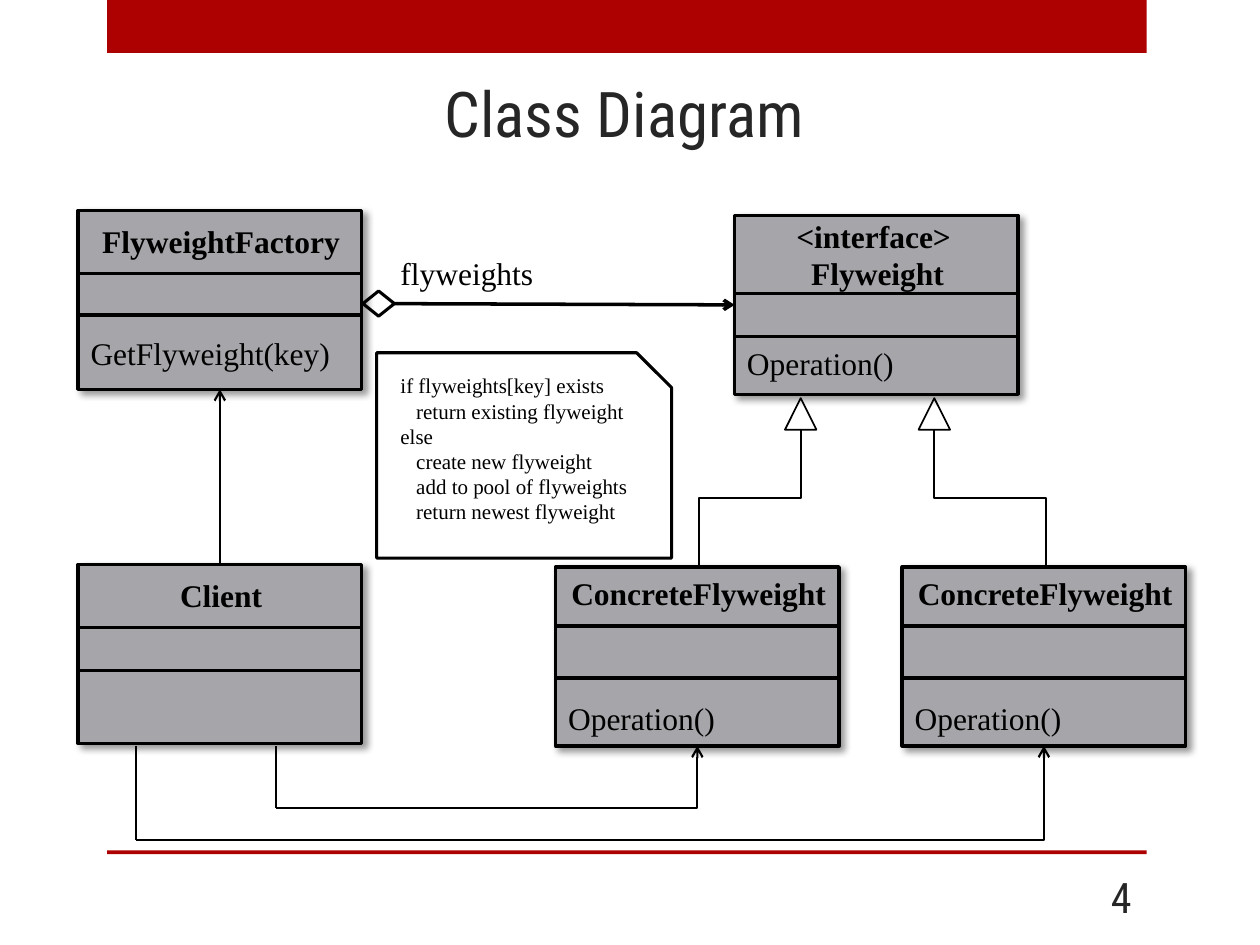
from lxml import etree
from pptx import Presentation
from pptx.dml.color import RGBColor
from pptx.enum.shapes import MSO_CONNECTOR, MSO_SHAPE
from pptx.enum.text import MSO_ANCHOR, MSO_AUTO_SIZE, PP_ALIGN
from pptx.oxml.ns import qn
from pptx.util import Inches, Pt

STRAIGHT, ELBOW = MSO_CONNECTOR.STRAIGHT, MSO_CONNECTOR.ELBOW
RECTANGLE, TRIANGLE = MSO_SHAPE.RECTANGLE, MSO_SHAPE.ISOSCELES_TRIANGLE
DIAMOND, SNIPPED = MSO_SHAPE.DIAMOND, MSO_SHAPE.SNIP_1_RECTANGLE
NOTE_SHAPE = MSO_SHAPE.SNIP_ROUND_RECTANGLE
LEFT, CENTER, RIGHT = PP_ALIGN.LEFT, PP_ALIGN.CENTER, PP_ALIGN.RIGHT
TOP, MIDDLE = MSO_ANCHOR.TOP, MSO_ANCHOR.MIDDLE
TOP_SITE, LEFT_SITE, BOTTOM_SITE, RIGHT_SITE = range(4)

COLUMNS, ROWS = 100, 75
CLASS_WIDTH, CLASS_HEIGHT = 22.5, 14.2
RED, GREY, BLACK, DARK = "AD0101", "A5A5AA", "000000", "262626"
HEADING_FONT, BODY_FONT = "Roboto Condensed", "Times New Roman"


def grid(cells):
    """Length of a number of grid cells, each a tenth of an inch square."""
    return Inches(cells / 10)


def color(hex_string):
    return RGBColor.from_string(hex_string)


def add_shape(slide, kind, box, fill=None, line_width=None):
    shape = slide.shapes.add_shape(kind, *map(grid, box))
    shape.shadow.inherit = False
    if fill:
        shape.fill.solid()
        shape.fill.fore_color.rgb = color(fill)
    else:
        shape.fill.background()
    if line_width:
        shape.line.color.rgb = color(BLACK)
        shape.line.width = Pt(line_width)
    else:
        shape.line.fill.background()
    return shape


def add_drop_shadow(shape):
    effects = shape._element.spPr.find(qn("a:effectLst"))
    shadow = etree.SubElement(effects, qn("a:outerShdw"), blurRad=str(Pt(4)),
                              dist=str(Pt(3)), dir="2700000", algn="tl", rotWithShape="0")
    tint = etree.SubElement(shadow, qn("a:srgbClr"), val=BLACK)
    etree.SubElement(tint, qn("a:alpha"), val="40000")


def add_text(slide, box, lines, size=18, bold=False, align=LEFT, anchor=TOP,
             font=BODY_FONT, ink=BLACK, wrap=True, grow=True):
    """Add a text box; each line is a pair of text and left indent in points."""
    frame = slide.shapes.add_textbox(*map(grid, box)).text_frame
    frame.word_wrap = wrap
    frame.auto_size = MSO_AUTO_SIZE.SHAPE_TO_FIT_TEXT if grow else MSO_AUTO_SIZE.NONE
    frame.vertical_anchor = anchor
    for index, (text, indent) in enumerate(lines):
        paragraph = frame.add_paragraph() if index else frame.paragraphs[0]
        paragraph.alignment = align
        if indent:
            paragraph._p.get_or_add_pPr().set("marL", str(Pt(indent)))
        run = paragraph.add_run()
        run.text = text
        run.font.name = font
        run.font.size = Pt(size)
        run.font.bold = bold
        run.font.color.rgb = color(ink)


def add_line(slide, start, end, width=1.25, arrow=False, kind=STRAIGHT):
    line = slide.shapes.add_connector(kind, *map(grid, start + end))
    line.line.color.rgb = color(BLACK)
    line.line.width = Pt(width)
    if arrow:
        etree.SubElement(line.line._get_or_add_ln(), qn("a:tailEnd"), type="arrow")
    etree.SubElement(line._element.spPr, qn("a:effectLst"))
    return line


def add_class(slide, left, top, names, operation, dividers, name_offset, operation_offset=0):
    """Add a class box with three compartments; offsets run down from its top."""
    box = add_shape(slide, RECTANGLE, (left, top, CLASS_WIDTH, CLASS_HEIGHT), GREY, 2)
    add_drop_shadow(box)
    for offset in dividers:
        add_line(slide, (left, top + offset), (left + CLASS_WIDTH, top + offset), 2)
    add_text(slide, (left + 0.1, top + name_offset, CLASS_WIDTH, 4 if len(names) == 1 else 7.1),
             [(name, 0) for name in names], bold=True, align=CENTER, wrap=False)
    if operation:
        add_text(slide, (left, top + operation_offset, CLASS_WIDTH, 4), [(operation, 0)])
    return box


def add_inheritance(slide, parent_x, child_x, width):
    """Add a hollow triangle and a line that goes down, across and down to a child."""
    add_shape(slide, TRIANGLE, (parent_x - 1.25, 31.6, 2.5, 2.5), line_width=1)
    top, bottom = 34.1, 45
    half_run, half_shift = (bottom - top) / 2, abs(child_x - parent_x) / 2
    center_x, center_y = (parent_x + child_x) / 2, (top + bottom) / 2
    side = 1 if child_x < parent_x else -1
    line = add_line(slide, (center_x - side * half_run, center_y - half_shift),
                    (center_x + side * half_run, center_y + half_shift), width, kind=ELBOW)
    quarter_turns = 1 if side > 0 else 3
    line._element.spPr.find(qn("a:xfrm")).set("rot", str(quarter_turns * 5400000))


def add_reference(slide, source_x, turn_y, target, source_bottom):
    """Add a line down from the client, then across and up to a target class."""
    add_line(slide, (source_x, source_bottom), (source_x, turn_y))
    line = add_line(slide, (source_x, turn_y), (source_x + 1, turn_y - 1), arrow=True, kind=ELBOW)
    line._element.spPr.find(qn("a:prstGeom")).set("prst", "bentConnector2")
    line.end_connect(target, BOTTOM_SITE)


def add_frame(slide):
    for top, height in ((0, 4.2), (67.5, 0.3)):
        add_shape(slide, RECTANGLE, (8.5, top, 82.5, height), RED)
    heading = {"anchor": MIDDLE, "font": HEADING_FONT, "ink": DARK, "grow": False}
    add_text(slide, (8.3, 5.3, 82.5, 7.2), [("Class Diagram", 0)], 36, align=CENTER, **heading)
    add_text(slide, (82.5, 69.2, 8.3, 4), [("4", 0)], 24, align=RIGHT, **heading)


def add_note(slide):
    note = add_shape(slide, NOTE_SHAPE, (29.9, 28, 23.4, 16.3), line_width=1.75)
    note.adjustments[0], note.adjustments[1] = 0, 0.17
    add_text(slide, (30.8, 29.1, 22.5, 13.1), [
        ("if flyweights[key] exists", 0),
        ("return existing flyweight", 9),
        ("else", 0),
        ("create new flyweight", 9),
        ("add to pool of flyweights", 9),
        ("return newest flyweight", 9),
    ], size=12)


def main():
    presentation = Presentation()
    presentation.slide_width, presentation.slide_height = grid(COLUMNS), grid(ROWS)
    slide = presentation.slides.add_slide(presentation.slide_layouts[6])
    add_frame(slide)

    flyweight = add_class(slide, 58.3, 17.1, ["<interface> ", "Flyweight"], "Operation()",
                          (6.2, 9.6), -0.4, 9.7)
    factory = add_class(slide, 6.2, 16.7, ["FlyweightFactory"], "GetFlyweight(key)",
                        (5, 8.3), 0.4, 9.3)
    client = add_class(slide, 6.2, 44.8, ["Client"], None, (5, 8.4), 0.4)
    concretes = [add_class(slide, left, 45, ["ConcreteFlyweight"], "Operation()",
                           (4.7, 8.8), 0.1, 10) for left in (44.1, 71.6)]

    diamond = add_shape(slide, DIAMOND, (28.8, 23.1, 2.5, 2), line_width=1.75)
    add_text(slide, (30.8, 19.7, 12.7, 4), [("flyweights", 0)])
    for source, source_site, target, target_site, width in (
            (diamond, RIGHT_SITE, flyweight, LEFT_SITE, 2),
            (client, TOP_SITE, factory, BOTTOM_SITE, 1.25)):
        line = add_line(slide, (0, 0), (1, 1), width, arrow=True)
        line.begin_connect(source, source_site)
        line.end_connect(target, target_site)

    add_inheritance(slide, 63.55, 55.45, 1.25)
    add_inheritance(slide, 74.15, 83, 1)
    for source_x, turn_y, target in zip((21.9, 10.8), (64.1, 66.7), concretes):
        add_reference(slide, source_x, turn_y, target, 59.2)
    add_note(slide)
    presentation.save("out.pptx")


if __name__ == "__main__":
    main()
